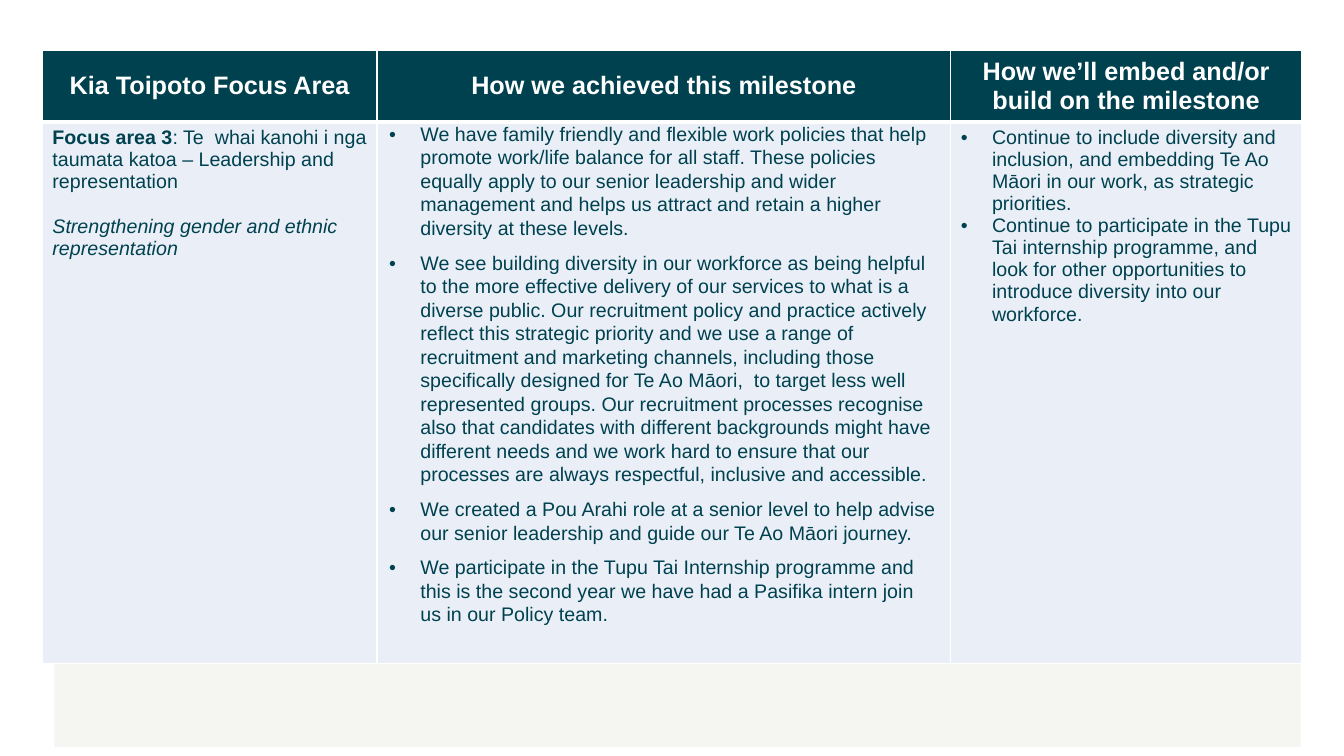
from dataclasses import dataclass

from lxml import etree
from pptx import Presentation
from pptx.dml.color import RGBColor
from pptx.enum.shapes import MSO_SHAPE
from pptx.enum.text import MSO_ANCHOR, PP_ALIGN
from pptx.oxml.ns import qn
from pptx.util import Inches, Pt

RECTANGLE = MSO_SHAPE.RECTANGLE
CENTER = PP_ALIGN.CENTER
MIDDLE = MSO_ANCHOR.MIDDLE
BLANK_LAYOUT = 6


@dataclass(frozen=True)
class Theme:
    font: str = "Arial"
    teal: str = "004150"
    white: str = "FFFFFF"
    pale_blue: str = "EAEFF7"
    band: str = "F5F5F2"
    heading_size: int = 18
    body_size: int = 14
    thin_line: int = 1
    thick_line: int = 3


THEME = Theme()
COLUMN_WIDTHS = (3.32, 5.69, 3.48)
ROW_HEIGHTS = (0.71, 5.37)
HEADINGS = (
    "Kia Toipoto Focus Area",
    "How we achieved this milestone",
    "How we’ll embed and/or build on the milestone",
)
FOCUS_LABEL = "Focus area 3"
FOCUS_NAME = ": Te  whai kanohi i nga taumata katoa – Leadership and representation"
FOCUS_AIM = "Strengthening gender and ethnic representation"
ACHIEVEMENTS = (
    "We have family friendly and flexible work policies that help promote work/life "
    "balance for all staff. These policies equally apply to our senior leadership and "
    "wider management and helps us attract and retain a higher diversity at these levels.",
    "We see building diversity in our workforce as being helpful to the more effective "
    "delivery of our services to what is a diverse public. Our recruitment policy and "
    "practice actively reflect this strategic priority and we use a range of recruitment "
    "and marketing channels, including those specifically designed for Te Ao Māori,  to "
    "target less well represented groups. Our recruitment processes recognise also that "
    "candidates with different backgrounds might have different needs and we work hard to "
    "ensure that our processes are always respectful, inclusive and accessible.",
    "We created a Pou Arahi role at a senior level to help advise our senior leadership "
    "and guide our Te Ao Māori journey.",
    "We participate in the Tupu Tai Internship programme and this is the second year we "
    "have had a Pasifika intern join us in our Policy team.",
)
NEXT_STEPS = (
    "Continue to include diversity and inclusion, and embedding Te Ao Māori in our work, "
    "as strategic priorities.",
    "Continue to participate in the Tupu Tai internship programme, and look for other "
    "opportunities to introduce diversity into our workforce.",
)


def rgb(value):
    return RGBColor.from_string(value)


def style_font(paragraph, size, color, bold=None, italic=None):
    font = paragraph.font
    font.name = THEME.font
    font.size = Pt(size)
    font.color.rgb = rgb(color)
    font.bold = bold
    font.italic = italic


def add_band(slide):
    band = slide.shapes.add_shape(
        RECTANGLE, Inches(0.54), Inches(6.26), Inches(12.36), Inches(1.15)
    )
    band.shadow.inherit = False
    band.fill.solid()
    band.fill.fore_color.rgb = rgb(THEME.band)
    band.line.fill.background()


def style_cell(cell, fill, top, bottom):
    properties = cell._tc.get_or_add_tcPr()
    widths = {"lnL": THEME.thin_line, "lnR": THEME.thin_line, "lnT": top, "lnB": bottom}
    for side, width in widths.items():
        border = etree.SubElement(properties, qn(f"a:{side}"), w=str(Pt(width)))
        paint = etree.SubElement(border, qn("a:solidFill"))
        etree.SubElement(paint, qn("a:srgbClr"), val=THEME.white)
    cell.fill.solid()
    cell.fill.fore_color.rgb = rgb(fill)


def fill_heading(cell, text):
    style_cell(cell, THEME.teal, THEME.thin_line, THEME.thick_line)
    cell.vertical_anchor = MIDDLE
    heading = cell.text_frame.paragraphs[0]
    heading.text = text
    heading.alignment = CENTER
    style_font(heading, THEME.heading_size, THEME.white, bold=True)


def fill_focus(cell):
    focus = cell.text_frame.paragraphs[0]
    for text, bold in ((FOCUS_LABEL, True), (FOCUS_NAME, False)):
        run = focus.add_run()
        run.text = text
        run.font.bold = bold
    style_font(focus, THEME.body_size, THEME.teal)
    aim = cell.text_frame.add_paragraph()
    aim.text = FOCUS_AIM
    aim.space_before = Pt(16)
    style_font(aim, THEME.body_size, THEME.teal, bold=False, italic=True)


def fill_bullets(cell, items, line_spacing=1.0, space_after=0):
    frame = cell.text_frame
    for index, text in enumerate(items):
        item = frame.add_paragraph() if index else frame.paragraphs[0]
        item.text = text
        properties = item._p.get_or_add_pPr()
        properties.set("marL", str(Inches(0.31)))
        properties.set("indent", str(Inches(-0.31)))
        etree.SubElement(properties, qn("a:buFont"), typeface=THEME.font)
        etree.SubElement(properties, qn("a:buChar"), char="•")
        item.line_spacing = line_spacing
        item.space_after = Pt(space_after)
        style_font(item, THEME.body_size, THEME.teal, bold=False)


def add_milestones(slide):
    table = slide.shapes.add_table(
        len(ROW_HEIGHTS), len(COLUMN_WIDTHS),
        Inches(0.42), Inches(0.5), Inches(sum(COLUMN_WIDTHS)), Inches(sum(ROW_HEIGHTS)),
    ).table
    for column, width in zip(table.columns, COLUMN_WIDTHS):
        column.width = Inches(width)
    for row, height in zip(table.rows, ROW_HEIGHTS):
        row.height = Inches(height)
    for index, heading in enumerate(HEADINGS):
        fill_heading(table.cell(0, index), heading)
        style_cell(table.cell(1, index), THEME.pale_blue, THEME.thick_line, THEME.thin_line)

    fill_focus(table.cell(1, 0))
    achieved = table.cell(1, 1)
    achieved.margin_left = achieved.margin_right = Inches(0.12)
    achieved.margin_top = achieved.margin_bottom = 0
    fill_bullets(achieved, ACHIEVEMENTS, line_spacing=1.07, space_after=8)
    fill_bullets(table.cell(1, 2), NEXT_STEPS)


def main():
    presentation = Presentation()
    presentation.slide_width = Inches(13.33)
    presentation.slide_height = Inches(7.5)
    slide = presentation.slides.add_slide(presentation.slide_layouts[BLANK_LAYOUT])
    add_band(slide)
    add_milestones(slide)
    presentation.save("out.pptx")


if __name__ == "__main__":
    main()
